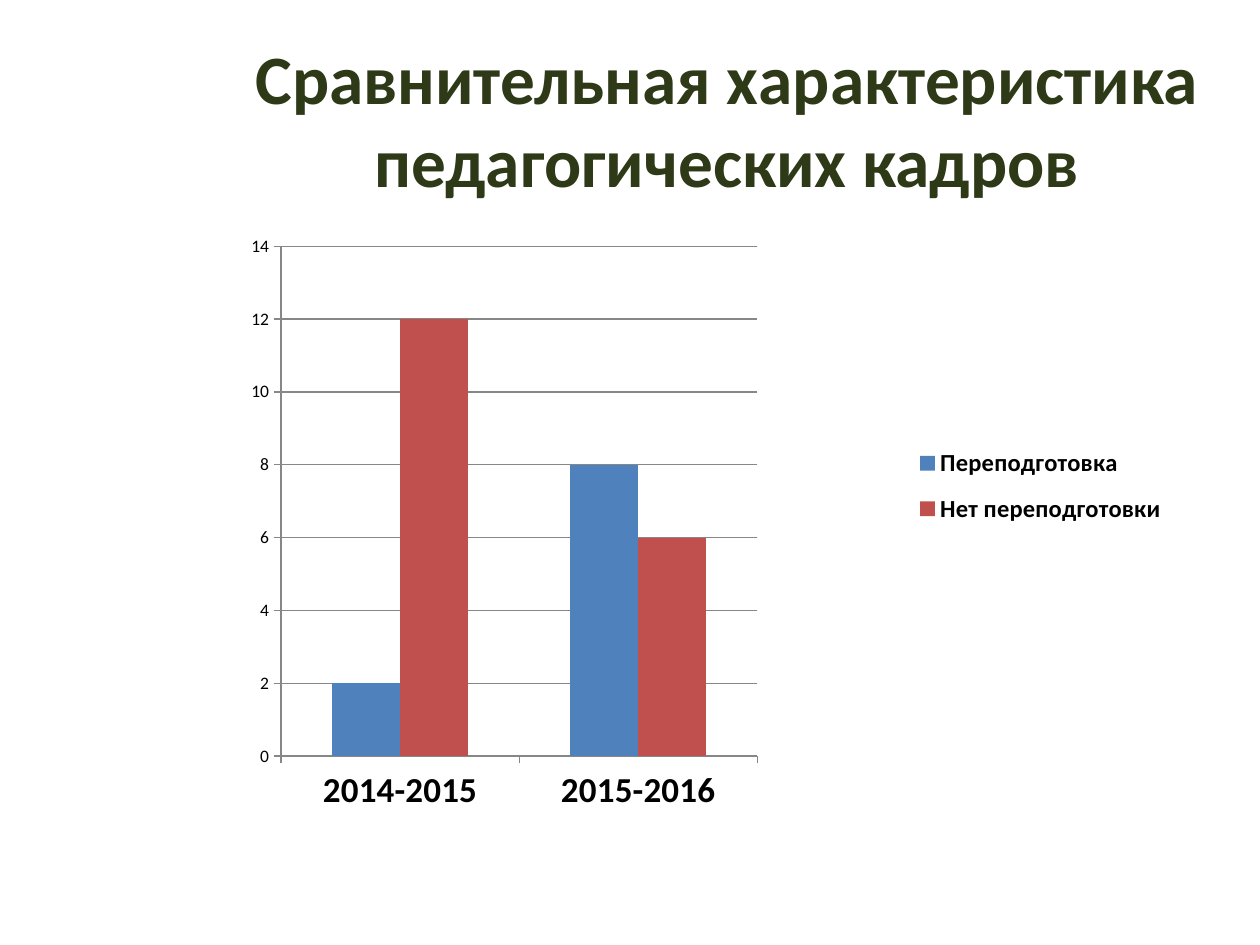
from lxml.etree import SubElement
from pptx import Presentation
from pptx.chart.data import CategoryChartData
from pptx.dml.color import RGBColor
from pptx.enum.chart import XL_CHART_TYPE, XL_LEGEND_POSITION, XL_TICK_MARK
from pptx.enum.text import MSO_ANCHOR, MSO_AUTO_SIZE, PP_ALIGN
from pptx.oxml.ns import qn
from pptx.util import Pt

EMU_PER_PX = 914400 // 126
FONT = "Calibri"
GREEN = RGBColor(0x2E, 0x39, 0x17)
BLACK = RGBColor(0, 0, 0)
GRAY = RGBColor(0x87, 0x87, 0x87)
BLUE = RGBColor(0x4F, 0x81, 0xBD)
RED = RGBColor(0xC0, 0x50, 0x4D)

LEFT, WIDTH = 237, 980
YEARS = ["2014-2015", "2015-2016"]
SERIES = [("Переподготовка", (2, 8), BLUE), ("Нет переподготовки", (12, 6), RED)]


def px(n):
    return n * EMU_PER_PX


def set_font(font, size, color, bold):
    font.name = FONT
    font.size = Pt(size)
    font.bold = bold
    font.color.rgb = color


def set_title(s, text):
    sp = s.shapes.title
    sp.left, sp.top, sp.width, sp.height = px(LEFT), px(39), px(WIDTH), px(158)
    tf = sp.text_frame
    tf.text = text
    tf.word_wrap = True
    tf.auto_size = MSO_AUTO_SIZE.NONE
    tf.vertical_anchor = MSO_ANCHOR.MIDDLE
    p = tf.paragraphs[0]
    p.alignment = PP_ALIGN.CENTER
    set_font(p.runs[0].font, 39.6, GREEN, True)


def set_layout(parent, position, inner=False):
    for old in parent.findall(qn("c:layout")):
        parent.remove(old)
    layout = SubElement(parent, qn("c:layout"))
    manual = SubElement(layout, qn("c:manualLayout"))
    if inner:
        SubElement(manual, qn("c:layoutTarget")).set("val", "inner")
    for tag in ("xMode", "yMode"):
        SubElement(manual, qn(f"c:{tag}")).set("val", "edge")
    for tag, value in zip("xywh", position):
        SubElement(manual, qn(f"c:{tag}")).set("val", str(value))
    parent.remove(layout)
    parent.insert(0 if inner else 1, layout)


def format_axis(axis, size, bold):
    axis.major_tick_mark = XL_TICK_MARK.OUTSIDE
    axis.minor_tick_mark = XL_TICK_MARK.NONE
    axis.format.line.color.rgb = GRAY
    set_font(axis.tick_labels.font, size, BLACK, bold)


def add_column_chart(s):
    data = CategoryChartData()
    data.categories = YEARS
    for name, values, _ in SERIES:
        data.add_series(name, values)
    chart = s.shapes.add_chart(XL_CHART_TYPE.COLUMN_CLUSTERED, px(LEFT), px(227),
                               px(WIDTH), px(624), data).chart
    chart.has_title = False
    set_font(chart.font, 10, BLACK, False)

    plot = chart.plots[0]
    plot.vary_by_categories = False
    plot.gap_width = 150
    plot.overlap = 0
    for series, (_, _, color) in zip(plot.series, SERIES):
        series.format.fill.solid()
        series.format.fill.fore_color.rgb = color

    format_axis(chart.category_axis, 20, True)
    axis = chart.value_axis
    format_axis(axis, 10, False)
    axis.minimum_scale, axis.maximum_scale, axis.major_unit = 0, 14, 2
    axis.has_major_gridlines = True
    axis.major_gridlines.format.line.color.rgb = GRAY

    chart.has_legend = True
    legend = chart.legend
    legend.position = XL_LEGEND_POSITION.RIGHT
    legend.include_in_layout = False
    set_font(legend.font, 14, BLACK, True)
    root = plot.series[0].format.fill and chart.element
    set_layout(root.find(".//" + qn("c:plotArea")), (0.045, 0.031, 0.486, 0.817), inner=True)
    set_layout(root.find(".//" + qn("c:legend")), (0.69, 0.33, 0.26, 0.17))


def main():
    prs = Presentation()
    prs.slide_width, prs.slide_height = px(1260), px(945)
    s = prs.slides.add_slide(prs.slide_layouts[5])
    set_title(s, "Сравнительная характеристика педагогических кадров")
    add_column_chart(s)
    prs.save("out.pptx")


if __name__ == "__main__":
    main()
